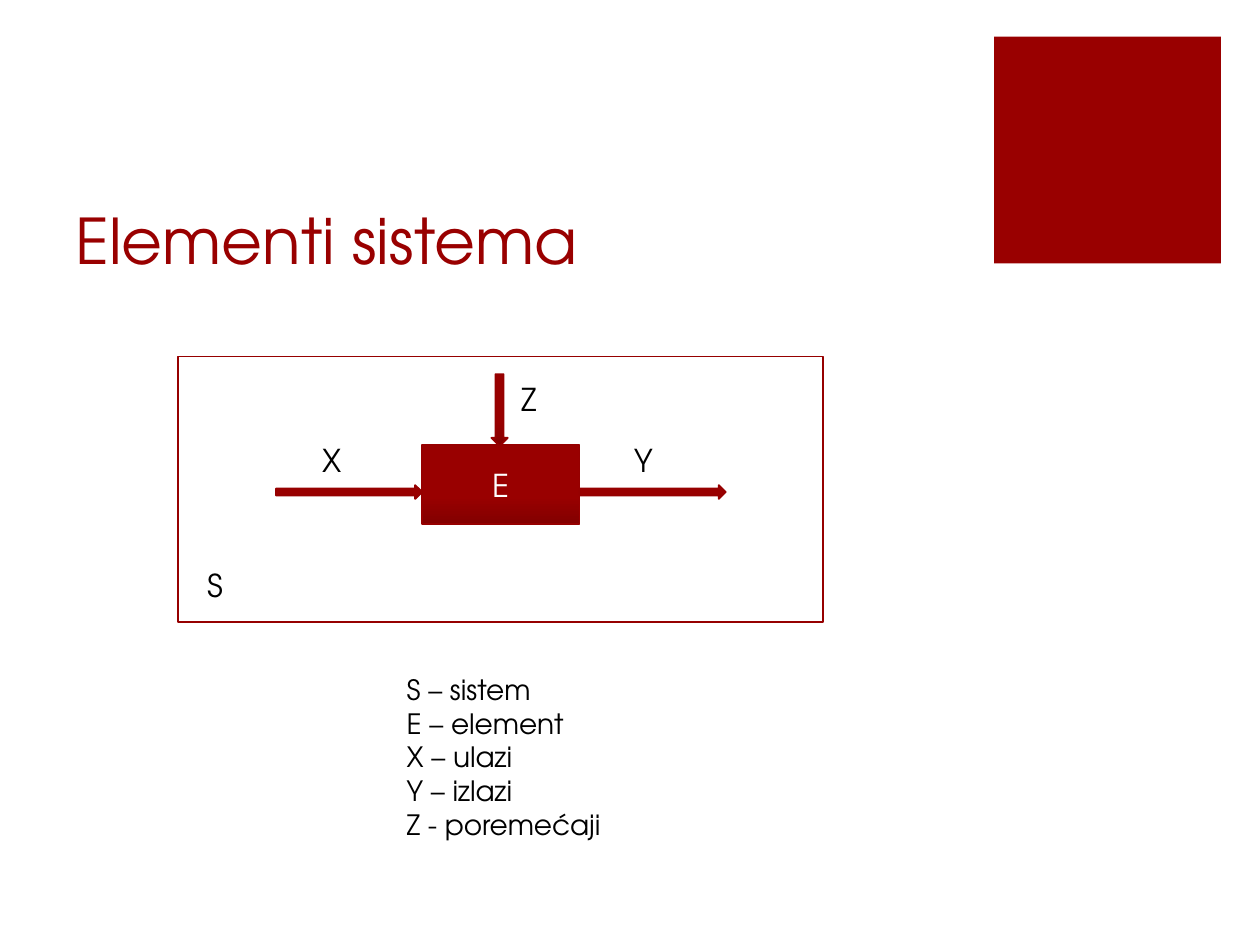
from dataclasses import dataclass

from pptx import Presentation
from pptx.dml.color import RGBColor
from pptx.enum.shapes import MSO_SHAPE
from pptx.enum.text import MSO_ANCHOR, PP_ALIGN
from pptx.shapes.autoshape import Shape
from pptx.slide import Slide
from pptx.util import Inches, Pt

RECTANGLE = MSO_SHAPE.RECTANGLE
RIGHT_ARROW = MSO_SHAPE.RIGHT_ARROW
DOWN_ARROW = MSO_SHAPE.DOWN_ARROW
TOP, MIDDLE, BOTTOM = MSO_ANCHOR.TOP, MSO_ANCHOR.MIDDLE, MSO_ANCHOR.BOTTOM
LEFT, CENTER = PP_ALIGN.LEFT, PP_ALIGN.CENTER

FONT = "TeX Gyre Adventor"
COLORS = {
    "red": "990000",
    "shade": "830000",
    "outline": "960000",
    "text": "000000",
    "white": "FFFFFF",
}


@dataclass(frozen=True)
class Area:
    left: float
    top: float
    width: float
    height: float

    def lengths(self) -> tuple:
        return tuple(Inches(n) for n in (self.left, self.top, self.width, self.height))


@dataclass(frozen=True)
class Label:
    text: str
    left: float
    top: float


ELEMENT = Area(3.35, 3.53, 1.25, 0.63)
FLOW_LENGTH = 1.16
ARROWS = (
    (RIGHT_ARROW, Area(ELEMENT.left - FLOW_LENGTH, 3.85, FLOW_LENGTH, 0.11)),
    (RIGHT_ARROW, Area(ELEMENT.left + ELEMENT.width, 3.85, FLOW_LENGTH, 0.11)),
    (DOWN_ARROW, Area(3.9, 2.97, 0.13, 0.57)),
)
LABELS = (
    Label("S", 1.55, 4.44),
    Label("X", 2.46, 3.45),
    Label("Y", 4.94, 3.45),
    Label("Z", 4.04, 2.97),
)
LEGEND = "S – sistem\nE – element\nX – ulazi\nY – izlazi\nZ - poremećaji"


def color(name: str) -> RGBColor:
    return RGBColor.from_string(COLORS[name])


def write(box: Shape, text: str, *, size: float = 18, ink: str = "text",
          align: PP_ALIGN = LEFT, anchor: MSO_ANCHOR = TOP) -> None:
    frame = box.text_frame
    frame.word_wrap = True
    frame.vertical_anchor = anchor
    frame.text = text
    for para in frame.paragraphs:
        para.alignment = align
        for span in para.runs:
            span.font.name = FONT
            span.font.size = Pt(size)
            span.font.color.rgb = color(ink)


def add_text(page: Slide, area: Area, text: str, **style) -> None:
    write(page.shapes.add_textbox(*area.lengths()), text, **style)


def add_outlined(page: Slide, kind: MSO_SHAPE, area: Area) -> Shape:
    shape = page.shapes.add_shape(kind, *area.lengths())
    shape.shadow.inherit = False
    shape.fill.background()
    shape.line.color.rgb = color("outline")
    shape.line.width = Pt(1)
    return shape


def add_shaded(page: Slide, kind: MSO_SHAPE, area: Area) -> Shape:
    shape = add_outlined(page, kind, area)
    shape.fill.gradient()
    shape.fill.gradient_angle = 90
    stops = (("shade", 0), ("red", 0.35))
    for stop, (name, position) in zip(shape.fill.gradient_stops, stops):
        stop.color.rgb = color(name)
        stop.position = position
    return shape


def main() -> None:
    """Build the slide about the elements of a system."""
    deck = Presentation()
    deck.slide_width, deck.slide_height = Inches(10), Inches(7.5)
    page = deck.slides.add_slide(deck.slide_layouts[6])

    corner = add_outlined(page, RECTANGLE, Area(7.89, 0.29, 1.8, 1.8))
    corner.fill.solid()
    corner.fill.fore_color.rgb = color("red")
    corner.line.fill.background()
    add_text(page, Area(0.5, 1, 7.12, 1.25), "Elementi sistema",
             size=36, ink="red", anchor=BOTTOM)

    add_outlined(page, RECTANGLE, Area(1.41, 2.83, 5.12, 2.11))
    element = add_shaded(page, RECTANGLE, ELEMENT)
    write(element, "E", ink="white", align=CENTER, anchor=MIDDLE)
    for kind, area in ARROWS:
        add_shaded(page, kind, area)
    for label in LABELS:
        add_text(page, Area(label.left, label.top, 0.29, 0.4), label.text)
    add_text(page, Area(3.13, 5.29, 2.97, 1.45), LEGEND, size=16)

    deck.save("out.pptx")


if __name__ == "__main__":
    main()
